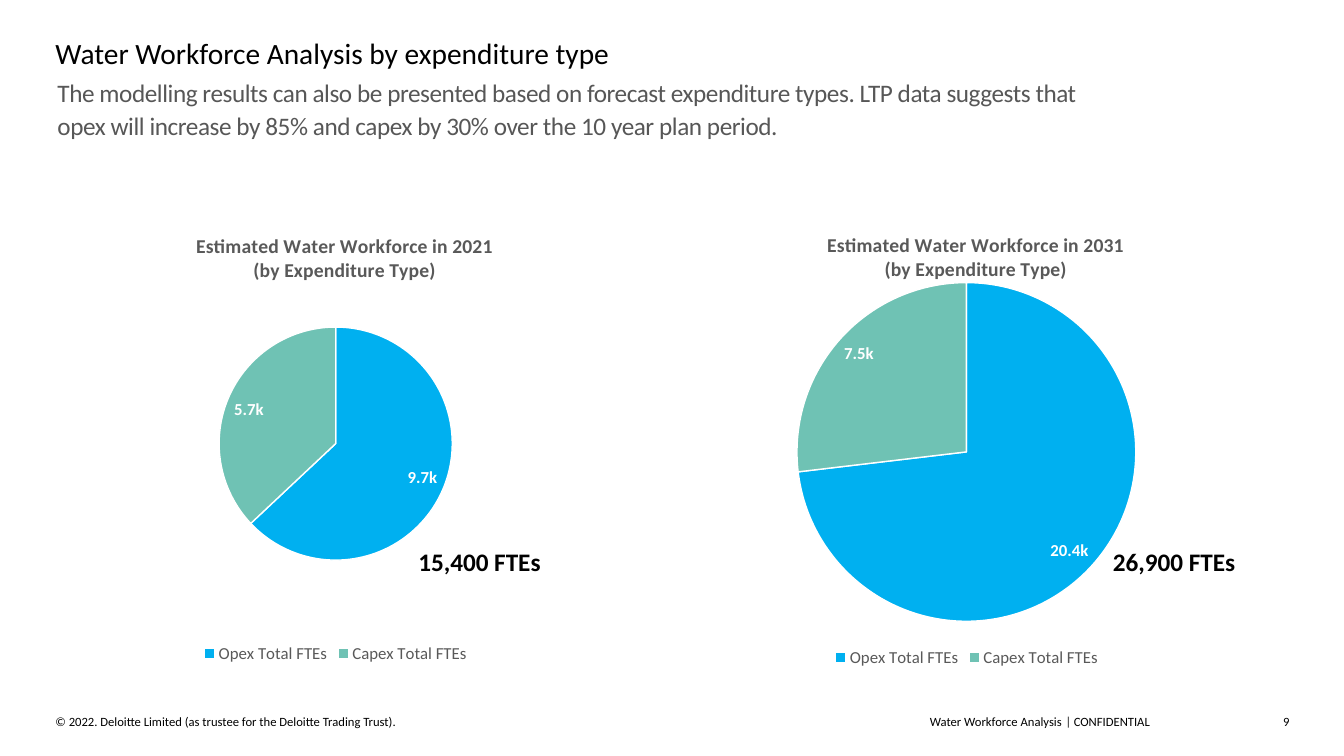
from lxml import etree
from pptx import Presentation
from pptx.chart.data import CategoryChartData
from pptx.dml.color import RGBColor
from pptx.enum.chart import XL_CHART_TYPE, XL_LABEL_POSITION, XL_LEGEND_POSITION
from pptx.enum.shapes import MSO_SHAPE
from pptx.enum.text import PP_ALIGN
from pptx.oxml.ns import qn
from pptx.util import Inches, Pt

PIE = XL_CHART_TYPE.PIE
INSIDE_END = XL_LABEL_POSITION.INSIDE_END
BOTTOM = XL_LEGEND_POSITION.BOTTOM
LEFT, RIGHT, CENTER = PP_ALIGN.LEFT, PP_ALIGN.RIGHT, PP_ALIGN.CENTER

BLACK = RGBColor(0x00, 0x00, 0x00)
WHITE = RGBColor(0xFF, 0xFF, 0xFF)
BODY_GREY = RGBColor(0x57, 0x57, 0x57)
CHART_GREY = RGBColor(0x59, 0x59, 0x59)
OPEX_BLUE = RGBColor(0x00, 0xB0, 0xF0)
CAPEX_GREEN = RGBColor(0x6F, 0xC2, 0xB4)
FONT = "Calibri"

# Content
TITLE = "Water Workforce Analysis by expenditure type"
SUMMARY = ("The modelling results can also be presented based on forecast expenditure "
           "types. LTP data suggests that opex will increase by 85% and capex by 30% "
           "over the 10 year plan period.")
CATEGORIES = ["Opex Total FTEs", "Capex Total FTEs"]
SLICE_COLOURS = [OPEX_BLUE, CAPEX_GREEN]
# Plot is left, top and size; title position is left, top (fractions of the chart)
PIES = [
    {"title": ["Estimated Water Workforce in 2021", "(by Expenditure Type)"],
     "values": [9700, 5700], "at": (0.97, 1.9), "plot": (0.255, 0.285, 0.49),
     "title_at": (0.2, 0.08), "total": "15,400 FTEs", "total_left": 4.05},
    {"title": ["Estimated Water Workforce in 2031", "(by Expenditure Type)"],
     "values": [20400, 7500], "at": (7.23, 1.94), "plot": (0.143, 0.183, 0.712),
     "title_at": (0.2, 0.07), "total": "26,900 FTEs", "total_left": 10.94},
]
CHART_SIZE = 4.72
TOTAL_TOP = 5.37
FOOTER_TOP = 7.08
# Text, left, width, alignment
FOOTERS = [
    ("© 2022. Deloitte Limited (as trustee for the Deloitte Trading Trust).",
     0.55, 5.86, LEFT),
    ("Water Workforce Analysis", 8.45, 2.08, RIGHT),
    ("CONFIDENTIAL", 10.65, 1.69, LEFT),
    ("9", 12.45, 0.34, RIGHT),
]


def style_font(font, size, colour, bold=False):
    font.name = FONT
    font.size = Pt(size)
    font.bold = bold
    font.color.rgb = colour


def add_text(page, text, box, size, colour=BLACK, bold=False, align=LEFT, inset=0.0):
    frame = page.shapes.add_textbox(*map(Inches, box)).text_frame
    frame.word_wrap = True
    frame.margin_left = frame.margin_right = Inches(inset)
    frame.margin_top = frame.margin_bottom = Inches(inset / 2)
    para = frame.paragraphs[0]
    para.alignment = align
    span = para.add_run()
    span.text = text
    style_font(span.font, size, colour, bold)
    return para


def set_layout(parent, index, values, inner=False):
    """Give a chart part a manual place, as fractions of the chart."""
    for old in parent.findall(qn("c:layout")):
        parent.remove(old)
    layout = etree.Element(qn("c:layout"))
    manual = etree.SubElement(layout, qn("c:manualLayout"))
    settings = [("layoutTarget", "inner")] if inner else []
    settings += [("xMode", "edge"), ("yMode", "edge")]
    settings += zip(("x", "y", "w", "h"), values)
    for name, value in settings:
        etree.SubElement(manual, qn("c:" + name)).set("val", str(value))
    parent.insert(index, layout)


def add_pie(page, pie):
    data = CategoryChartData()
    data.categories = CATEGORIES
    data.add_series("Total FTEs", pie["values"])
    left, top = pie["at"]
    chart = page.shapes.add_chart(PIE, Inches(left), Inches(top), Inches(CHART_SIZE),
                                  Inches(CHART_SIZE), data).chart
    style_font(chart.font, 10, BLACK)

    # Chart title
    chart.has_title = True
    frame = chart.chart_title.text_frame
    for number, line in enumerate(pie["title"]):
        para = frame.add_paragraph() if number else frame.paragraphs[0]
        para.alignment = CENTER
        span = para.add_run()
        span.text = line
        style_font(span.font, 14, CHART_GREY, True)
    chart.chart_title.include_in_layout = False
    set_layout(chart.chart_title.format._element, 1, pie["title_at"])

    # Legend
    chart.has_legend = True
    chart.legend.position = BOTTOM
    chart.legend.include_in_layout = False
    style_font(chart.legend.font, 12, CHART_GREY)

    # Slices and their labels
    plot = chart.plots[0]
    plot.vary_by_categories = True
    for number, colour in enumerate(SLICE_COLOURS):
        look = plot.series[0].points[number].format
        look.fill.solid()
        look.fill.fore_color.rgb = colour
        look.line.color.rgb = WHITE
        look.line.width = Pt(1)
    plot.has_data_labels = True
    labels = plot.data_labels
    labels.show_value = True
    labels.show_percentage = False
    labels.number_format = '0.0,"k"'
    labels.number_format_is_linked = False
    labels.position = INSIDE_END
    style_font(labels.font, 12, WHITE, True)
    x, y, size = pie["plot"]
    plot_area = chart._chartSpace.find(".//" + qn("c:plotArea"))
    set_layout(plot_area, 0, (x, y, size, size), inner=True)


def main():
    deck = Presentation()
    deck.slide_width, deck.slide_height = Inches(13.33), Inches(7.5)
    page = deck.slides.add_slide(deck.slide_layouts[6])

    # Heading and summary
    add_text(page, TITLE, (0.55, 0.35, 12.24, 0.37), 21)
    summary = add_text(page, SUMMARY, (0.57, 0.75, 10.51, 0.81), 18, BODY_GREY)
    summary.line_spacing = 1.07
    summary.runs[0].font._element.set("spc", "-30")

    # Pies, then their totals on top
    for pie in PIES:
        add_pie(page, pie)
    for pie in PIES:
        add_text(page, pie["total"], (pie["total_left"], TOTAL_TOP, 1.68, 0.4), 18,
                 bold=True, inset=0.1)

    # Footer
    for text, left, width, align in FOOTERS:
        add_text(page, text, (left, FOOTER_TOP, width, 0.16), 9, align=align)
    divider = page.shapes.add_shape(MSO_SHAPE.RECTANGLE, Inches(10.59), Inches(7.11),
                                    Inches(0.01), Inches(0.11))
    divider.shadow.inherit = False
    divider.fill.solid()
    divider.fill.fore_color.rgb = BLACK
    divider.line.fill.background()

    deck.save("out.pptx")


if __name__ == "__main__":
    main()
